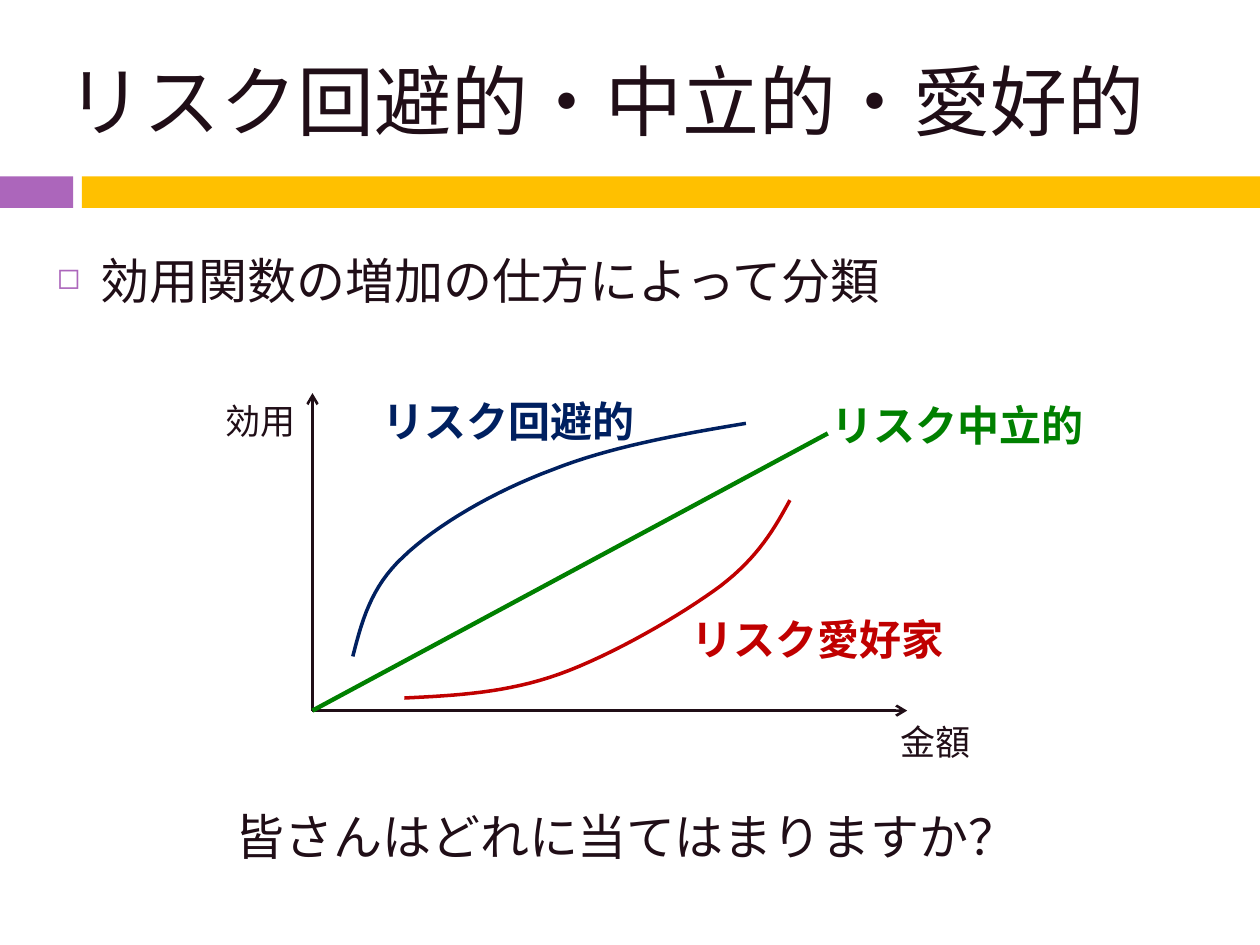
from lxml import etree
from pptx import Presentation
from pptx.dml.color import RGBColor
from pptx.enum.shapes import MSO_CONNECTOR, MSO_SHAPE
from pptx.enum.text import MSO_ANCHOR, MSO_AUTO_SIZE
from pptx.oxml.ns import qn
from pptx.util import Inches, Pt

FONT = "Noto Sans CJK JP"
INK = RGBColor(0x20, 0x0E, 0x17)
PURPLE = RGBColor(0xAC, 0x66, 0xBB)
GOLD = RGBColor(0xFF, 0xC0, 0x00)
NAVY = RGBColor(0x00, 0x20, 0x60)
GREEN = RGBColor(0x00, 0x80, 0x00)
RED = RGBColor(0xC0, 0x00, 0x00)

prs = Presentation()
prs.slide_width, prs.slide_height = Inches(10), Inches(7.5)
s = prs.slides.add_slide(prs.slide_layouts[6])


def add_text(text, x, y, w, h, size, color=INK, bold=False, wrap=False):
    sp = s.shapes.add_textbox(Inches(x), Inches(y), Inches(w), Inches(h))
    tf = sp.text_frame
    tf.text = text
    tf.word_wrap = wrap
    tf.auto_size = MSO_AUTO_SIZE.NONE if wrap else MSO_AUTO_SIZE.SHAPE_TO_FIT_TEXT
    r = tf.paragraphs[0].runs[0]
    r.font.size = Pt(size)
    r.font.bold = bold
    r.font.name = FONT
    r.font.color.rgb = color
    etree.SubElement(r.font._element, qn("a:ea"), typeface=FONT)
    return tf


def add_line(x1, y1, x2, y2, color, width, arrow=False):
    sp = s.shapes.add_connector(
        MSO_CONNECTOR.STRAIGHT, Inches(x1), Inches(y1), Inches(x2), Inches(y2))
    sp.line.color.rgb = color
    sp.line.width = Pt(width)
    if arrow:
        etree.SubElement(sp.line._get_or_add_ln(), qn("a:tailEnd"), type="arrow")
    etree.SubElement(sp._element.spPr, qn("a:effectLst"))


for x, w, color in [(0, 0.58, PURPLE), (0.65, 9.35, GOLD)]:
    sp = s.shapes.add_shape(
        MSO_SHAPE.RECTANGLE, Inches(x), Inches(1.4), Inches(w), Inches(0.25))
    sp.shadow.inherit = False
    sp.fill.solid()
    sp.fill.fore_color.rgb = color
    sp.line.fill.background()

tf = add_text("リスク回避的・中立的・愛好的", 0.43, 0.25, 9.15, 1.08, 44, wrap=True)
tf.vertical_anchor = MSO_ANCHOR.MIDDLE

tf = add_text("効用関数の増加の仕方によって分類", 0.35, 1.94, 9.45, 5.35, 28, wrap=True)
p = tf.paragraphs[0]
p.space_before = Pt(7)
pPr = p._p.get_or_add_pPr()
pPr.set("marL", str(Inches(0.35)))
pPr.set("indent", str(Inches(-0.35)))
buClr = etree.SubElement(pPr, qn("a:buClr"))
etree.SubElement(buClr, qn("a:srgbClr"), val=str(PURPLE))
etree.SubElement(pPr, qn("a:buSzPct"), val="60000")
etree.SubElement(pPr, qn("a:buChar"), char="◻")

X0, Y0 = 2.48, 5.64
add_line(X0, Y0, X0, 3.12, INK, 1.5, arrow=True)
add_line(X0, Y0, 7.2, Y0, INK, 1.5, arrow=True)
add_line(X0, Y0, 6.57, 3.44, GREEN, 2.5)

curves = [
    (NAVY, [(2.8, 5.21), (2.87, 4.94), (2.94, 4.66), (3.2, 4.42), (3.46, 4.17),
            (3.92, 3.9), (4.38, 3.73), (4.83, 3.55), (5.38, 3.45), (5.92, 3.36)]),
    (RED, [(3.21, 5.54), (3.62, 5.52), (4.02, 5.5), (4.44, 5.35), (4.86, 5.2),
           (5.41, 4.88), (5.72, 4.65), (6.02, 4.42), (6.15, 4.19), (6.27, 3.97)]),
]
STEPS = 16
for color, pts in curves:
    dots = []
    for i in range(0, len(pts) - 1, 3):
        for n in range(1, STEPS + 1):
            t = n / STEPS
            weights = ((1 - t) ** 3, 3 * t * (1 - t) ** 2, 3 * t ** 2 * (1 - t), t ** 3)
            dots.append(tuple(
                Inches(sum(k * pt[axis] for k, pt in zip(weights, pts[i:i + 4])))
                for axis in (0, 1)))
    fb = s.shapes.build_freeform(Inches(pts[0][0]), Inches(pts[0][1]))
    fb.add_line_segments(dots, close=False)
    sp = fb.convert_to_shape()
    sp.shadow.inherit = False
    sp.fill.background()
    sp.line.color.rgb = color
    sp.line.width = Pt(2)

for text, x, y in [("効用", 1.69, 3.12), ("金額", 7.05, 5.67)]:
    add_text(text, x, y, 0.76, 0.44, 20)

for text, x, y, color in [
    ("リスク回避的", 2.94, 3.09, NAVY),
    ("リスク愛好家", 5.39, 4.82, RED),
    ("リスク中立的", 6.5, 3.12, GREEN),
]:
    add_text(text, x, y, 2.22, 0.5, 24, color, bold=True)

add_text("皆さんはどれに当てはまりますか？", 1.77, 6.35, 6.48, 0.57, 28)

prs.save("out.pptx")
